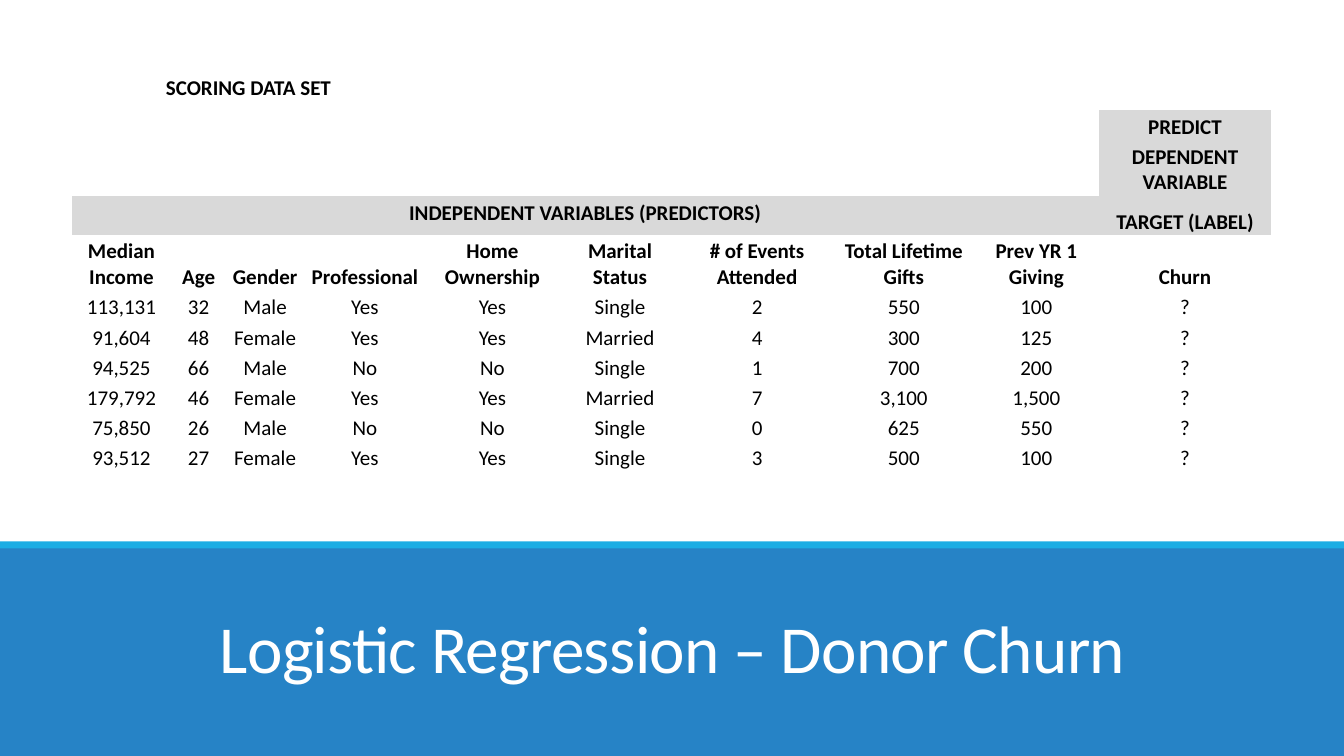
from dataclasses import dataclass

from pptx import Presentation
from pptx.dml.color import RGBColor
from pptx.enum.shapes import MSO_SHAPE
from pptx.enum.text import MSO_ANCHOR, MSO_AUTO_SIZE, PP_ALIGN
from pptx.oxml.ns import qn
from pptx.presentation import Presentation as Deck
from pptx.slide import Slide
from pptx.table import Table
from pptx.util import Inches, Pt


@dataclass(frozen=True)
class Theme:
    font: str = "Calibri"
    white: str = "FFFFFF"
    black: str = "000000"
    blue: str = "2683C6"
    cyan: str = "1CADE4"
    gray: str = "D9D9D9"
    title_size: int = 48
    table_size: int = 15
    plain_table: str = "{2D5ABB26-0587-4C30-8999-92F81FD0307C}"


@dataclass(frozen=True)
class Box:
    left: float
    top: float
    width: float
    height: float

    def place(self, prs: Deck) -> tuple[int, int, int, int]:
        w, h = prs.slide_width, prs.slide_height
        return (round(self.left * w), round(self.top * h),
                round(self.width * w), round(self.height * h))


@dataclass(frozen=True)
class Band:
    box: Box
    color: str


@dataclass(frozen=True)
class Label:
    row: int
    col: int
    text: str
    bold: bool = True
    shaded: bool = False
    span: int = 1


THEME = Theme()
WIDTH, HEIGHT = 13.33, 7.5
TITLE_BOX = Box(1.17 / WIDTH, 5.74 / HEIGHT, 11 / WIDTH, 1.13 / HEIGHT)
TABLE_BOX = Box(0.71 / WIDTH, 0.7 / HEIGHT, 11.9 / WIDTH, 3.98 / HEIGHT)
TITLE_BAND = Band(Box(0, 5.42 / HEIGHT, 1, 2.08 / HEIGHT), THEME.blue)
ACCENT_BAND = Band(Box(0, 5.37 / HEIGHT, 1, 0.07 / HEIGHT), THEME.cyan)

COLUMN_WEIGHTS = [99, 54, 78, 120, 133, 120, 152, 139, 124, 171]
ROW_WEIGHTS = [39, 30, 55, 39, 55] + [30] * 6
LAST_COL = len(COLUMN_WEIGHTS) - 1
HEADER_ROW = 4

HEADERS = ["Median Income", "Age", "Gender", "Professional", "Home Ownership",
           "Marital Status", "# of Events Attended", "Total Lifetime Gifts",
           "Prev YR 1 Giving", "Churn"]
DONORS = [
    ["113,131", "32", "Male", "Yes", "Yes", "Single", "2", "550", "100", "?"],
    ["91,604", "48", "Female", "Yes", "Yes", "Married", "4", "300", "125", "?"],
    ["94,525", "66", "Male", "No", "No", "Single", "1", "700", "200", "?"],
    ["179,792", "46", "Female", "Yes", "Yes", "Married", "7", "3,100", "1,500", "?"],
    ["75,850", "26", "Male", "No", "No", "Single", "0", "625", "550", "?"],
    ["93,512", "27", "Female", "Yes", "Yes", "Single", "3", "500", "100", "?"],
]
LABELS = [
    Label(0, 0, "SCORING DATA SET", span=4),
    Label(1, LAST_COL, "PREDICT", shaded=True),
    Label(2, LAST_COL, "DEPENDENT VARIABLE", shaded=True),
    Label(3, 0, "INDEPENDENT VARIABLES (PREDICTORS)", shaded=True, span=9),
    Label(3, LAST_COL, "TARGET (LABEL)", shaded=True),
] + [
    Label(HEADER_ROW + i, j, text, bold=i == 0)
    for i, row in enumerate([HEADERS, *DONORS])
    for j, text in enumerate(row)
]


def add_run(p, text: str, size: int, color: str, bold: bool = False):
    r = p.add_run()
    r.text = text
    r.font.name = THEME.font
    r.font.size = Pt(size)
    r.font.bold = bold
    r.font.color.rgb = RGBColor.from_string(color)
    return r


def draw_band(prs: Deck, s: Slide, band: Band) -> None:
    sp = s.shapes.add_shape(MSO_SHAPE.RECTANGLE, *band.box.place(prs))
    sp.shadow.inherit = False
    sp.fill.solid()
    sp.fill.fore_color.rgb = RGBColor.from_string(band.color)
    sp.line.fill.background()


def draw_title(prs: Deck, s: Slide, text: str) -> None:
    sp = s.shapes.title
    sp.left, sp.top, sp.width, sp.height = TITLE_BOX.place(prs)
    s.shapes._spTree.append(sp._element)
    tf = sp.text_frame
    tf.word_wrap = True
    tf.auto_size = MSO_AUTO_SIZE.NONE
    tf.vertical_anchor = MSO_ANCHOR.BOTTOM
    p = tf.paragraphs[0]
    p.alignment = PP_ALIGN.CENTER
    p.line_spacing = 0.85
    r = add_run(p, text, THEME.title_size, THEME.white)
    r.font._element.set("spc", "-50")


def draw_label(tbl: Table, label: Label) -> None:
    cell = tbl.cell(label.row, label.col)
    if label.span > 1:
        cell.merge(tbl.cell(label.row, label.col + label.span - 1))
        cell.margin_left = cell.margin_right = Inches(0.1)
        cell.margin_top = cell.margin_bottom = Inches(0.05)
        cell.vertical_anchor = MSO_ANCHOR.TOP
    if label.shaded:
        cell.fill.solid()
        cell.fill.fore_color.rgb = RGBColor.from_string(THEME.gray)
    p = cell.text_frame.paragraphs[0]
    p.alignment = PP_ALIGN.CENTER
    add_run(p, label.text, THEME.table_size, THEME.black, label.bold)


def draw_table(prs: Deck, s: Slide) -> None:
    place = TABLE_BOX.place(prs)
    tbl = s.shapes.add_table(len(ROW_WEIGHTS), len(COLUMN_WEIGHTS), *place).table
    tbl.first_row = tbl.horz_banding = False
    tbl._tbl.tblPr.find(qn("a:tableStyleId")).text = THEME.plain_table
    for col, weight in zip(tbl.columns, COLUMN_WEIGHTS):
        col.width = round(place[2] * weight / sum(COLUMN_WEIGHTS))
    for row, weight in zip(tbl.rows, ROW_WEIGHTS):
        row.height = round(place[3] * weight / sum(ROW_WEIGHTS))
    for cell in tbl.iter_cells():
        cell.fill.background()
        cell.margin_left = cell.margin_right = cell.margin_top = Inches(0.01)
        cell.margin_bottom = 0
        cell.vertical_anchor = MSO_ANCHOR.BOTTOM
        end = cell.text_frame.paragraphs[0]._p.get_or_add_endParaRPr()
        end.set("sz", str(THEME.table_size * 100))
    for label in LABELS:
        draw_label(tbl, label)


def main() -> None:
    prs = Presentation()
    prs.slide_width, prs.slide_height = Inches(WIDTH), Inches(HEIGHT)
    s = prs.slides.add_slide(prs.slide_layouts[5])
    s.background.fill.solid()
    s.background.fill.fore_color.rgb = RGBColor.from_string(THEME.white)
    draw_band(prs, s, TITLE_BAND)
    draw_title(prs, s, "Logistic Regression – Donor Churn")
    draw_band(prs, s, ACCENT_BAND)
    draw_table(prs, s)
    prs.save("out.pptx")


if __name__ == "__main__":
    main()
